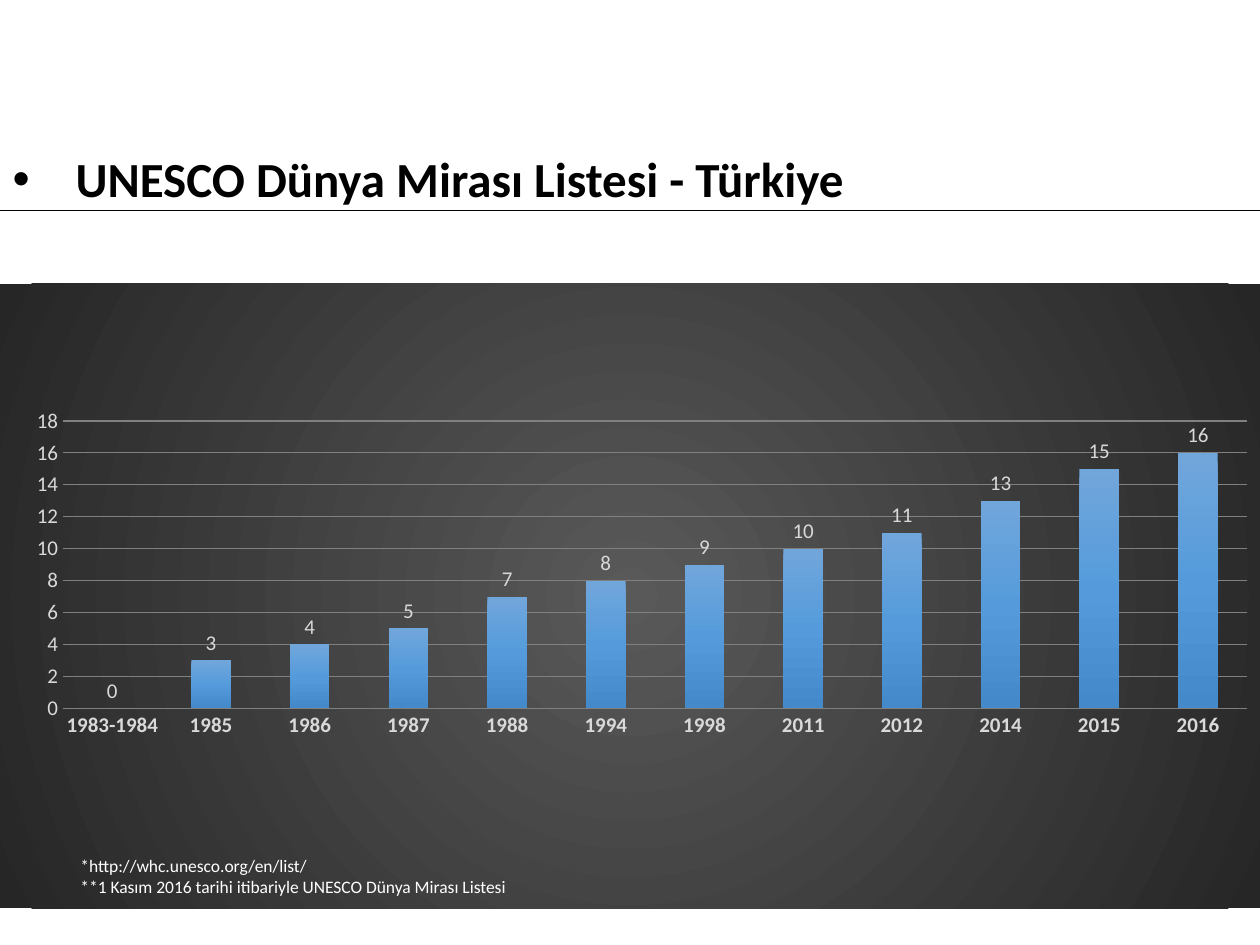
from dataclasses import dataclass

from lxml.etree import SubElement
from pptx import Presentation
from pptx.chart.data import CategoryChartData
from pptx.dml.color import RGBColor
from pptx.enum.chart import XL_CHART_TYPE as ChartType
from pptx.enum.chart import XL_LABEL_POSITION as LabelPosition
from pptx.enum.chart import XL_TICK_MARK as TickMark
from pptx.enum.shapes import MSO_CONNECTOR as Connector
from pptx.enum.text import MSO_ANCHOR as Anchor
from pptx.enum.text import MSO_AUTO_SIZE as AutoSize
from pptx.enum.text import PP_ALIGN as Align
from pptx.oxml import parse_xml
from pptx.oxml.ns import nsdecls, qn
from pptx.util import Inches, Pt


@dataclass(frozen=True)
class Theme:
    font: str = "Calibri"
    ink: str = "000000"
    note: str = "FFFFFF"
    label: str = "D9D9D9"
    grid: str = "808080"
    panel: tuple = ((0, "595959"), (100, "262626"))
    bar: tuple = ((0, "71A6DB"), (50, "559BDB"), (100, "448ACA"))
    title_size: int = 28
    label_size: int = 12
    note_size: int = 10


@dataclass(frozen=True)
class Box:
    left: float
    top: float
    width: float
    height: float

    def inches(self) -> tuple:
        return tuple(Inches(v) for v in (self.left, self.top, self.width, self.height))


@dataclass(frozen=True)
class YearCount:
    year: str
    sites: int


THEME = Theme()
TITLE = "UNESCO Dünya Mirası Listesi - Türkiye"
NOTES = (
    "*http://whc.unesco.org/en/list/",
    "**1 Kasım 2016 tarihi itibariyle UNESCO Dünya Mirası Listesi",
)
COUNTS = (
    YearCount("1983-1984", 0), YearCount("1985", 3), YearCount("1986", 4),
    YearCount("1987", 5), YearCount("1988", 7), YearCount("1994", 8),
    YearCount("1998", 9), YearCount("2011", 10), YearCount("2012", 11),
    YearCount("2014", 13), YearCount("2015", 15), YearCount("2016", 16),
)
LINEAR = '<a:lin ang="5400000" scaled="0"/>'
RADIAL = ('<a:path path="circle"><a:fillToRect l="50000" t="50000" '
          'r="50000" b="50000"/></a:path>')


def style_font(font, size: int, color: str, bold: bool = False) -> None:
    font.name = THEME.font
    font.size = Pt(size)
    font.bold = bold
    font.color.rgb = RGBColor.from_string(color)


def gradient(stops: tuple, direction: str):
    marks = "".join(
        f'<a:gs pos="{pos * 1000}"><a:srgbClr val="{color}"/></a:gs>'
        for pos, color in stops
    )
    return parse_xml(f'<a:gradFill {nsdecls("a")}><a:gsLst>{marks}</a:gsLst>'
                     f'{direction}</a:gradFill>')


def add_title(slide, box: Box) -> None:
    title = slide.shapes.title
    title.left, title.top, title.width, title.height = box.inches()
    frame = title.text_frame
    frame.word_wrap = True
    frame.auto_size = AutoSize.SHAPE_TO_FIT_TEXT
    frame.vertical_anchor = Anchor.TOP
    heading = frame.paragraphs[0]
    heading.alignment = Align.LEFT
    # Hanging bullet
    props = heading._p.get_or_add_pPr()
    props.set("marL", str(Inches(0.5)))
    props.set("indent", str(Inches(-0.5)))
    SubElement(props, qn("a:buFont"), typeface="Arial")
    SubElement(props, qn("a:buChar"), char="•")
    run = heading.add_run()
    run.text = TITLE
    style_font(run.font, THEME.title_size, THEME.ink, bold=True)


def add_rule(slide, top: float, width: float) -> None:
    rule = slide.shapes.add_connector(
        Connector.STRAIGHT, Inches(0), Inches(top), Inches(width), Inches(top))
    rule.line.color.rgb = RGBColor.from_string(THEME.ink)
    rule.line.width = Pt(0.5)
    SubElement(rule._element.spPr, qn("a:effectLst"))


def style_axis(axis, bold: bool) -> None:
    axis.major_tick_mark = axis.minor_tick_mark = TickMark.NONE
    axis.format.line.fill.background()
    style_font(axis.tick_labels.font, THEME.label_size, THEME.label, bold)


def place_plot(chart, area: Box) -> None:
    """Set the inner plot area as fractions of the chart."""
    plot_area = chart._chartSpace.chart.plotArea
    for old in plot_area.findall(qn("c:layout")):
        plot_area.remove(old)
    modes = '<c:xMode val="edge"/><c:yMode val="edge"/>'
    sizes = (f'<c:x val="{area.left}"/><c:y val="{area.top}"/>'
             f'<c:w val="{area.width}"/><c:h val="{area.height}"/>')
    plot_area.insert(0, parse_xml(
        f'<c:layout {nsdecls("c")}><c:manualLayout><c:layoutTarget val="inner"/>'
        f'{modes}{sizes}</c:manualLayout></c:layout>'))


def add_site_chart(slide, box: Box) -> None:
    data = CategoryChartData()
    data.categories = [count.year for count in COUNTS]
    data.add_series("Series 1", [count.sites for count in COUNTS])
    chart = slide.shapes.add_chart(
        ChartType.COLUMN_CLUSTERED, *box.inches(), data).chart
    chart.has_legend = False
    chart.has_title = False
    style_font(chart.font, THEME.note_size, THEME.ink)
    place_plot(chart, Box(0.05, 0.22, 0.94, 0.46))

    # Dark panel behind the plot
    panel = parse_xml(f'<c:spPr {nsdecls("c", "a")}><a:ln><a:noFill/></a:ln></c:spPr>')
    panel.insert(0, gradient(THEME.panel, RADIAL))
    chart._chartSpace.chart.addnext(panel)

    # Axes and gridlines
    style_axis(chart.category_axis, bold=True)
    values = chart.value_axis
    style_axis(values, bold=False)
    values.minimum_scale, values.maximum_scale, values.major_unit = 0, 18, 2
    values.has_major_gridlines = True
    grid = values.major_gridlines.format.line
    grid.color.rgb = RGBColor.from_string(THEME.grid)
    grid.width = Pt(0.75)

    # Columns and their values
    plot = chart.plots[0]
    plot.gap_width = 150
    plot.vary_by_categories = False
    sites = plot.series[0]
    sites.invert_if_negative = False
    sites._element.get_or_add_spPr().insert(0, gradient(THEME.bar, LINEAR))
    labels = sites.data_labels
    labels.show_value = True
    labels.position = LabelPosition.OUTSIDE_END
    style_font(labels.font, THEME.label_size, THEME.label)


def add_notes(slide, box: Box) -> None:
    frame = slide.shapes.add_textbox(*box.inches()).text_frame
    frame.word_wrap = True
    for index, note in enumerate(NOTES):
        line = frame.add_paragraph() if index else frame.paragraphs[0]
        run = line.add_run()
        run.text = note
        style_font(run.font, THEME.note_size, THEME.note)


def main() -> None:
    deck = Presentation()
    deck.slide_width, deck.slide_height = Inches(10), Inches(7.5)
    slide = deck.slides.add_slide(deck.slide_layouts[5])
    add_site_chart(slide, Box(0, 2.25, 10, 4.96))
    add_notes(slide, Box(0.54, 6.74, 6.12, 0.47))
    add_rule(slide, top=1.67, width=10)
    add_title(slide, Box(0, 1.13, 9.43, 0.57))
    deck.save("out.pptx")


if __name__ == "__main__":
    main()
